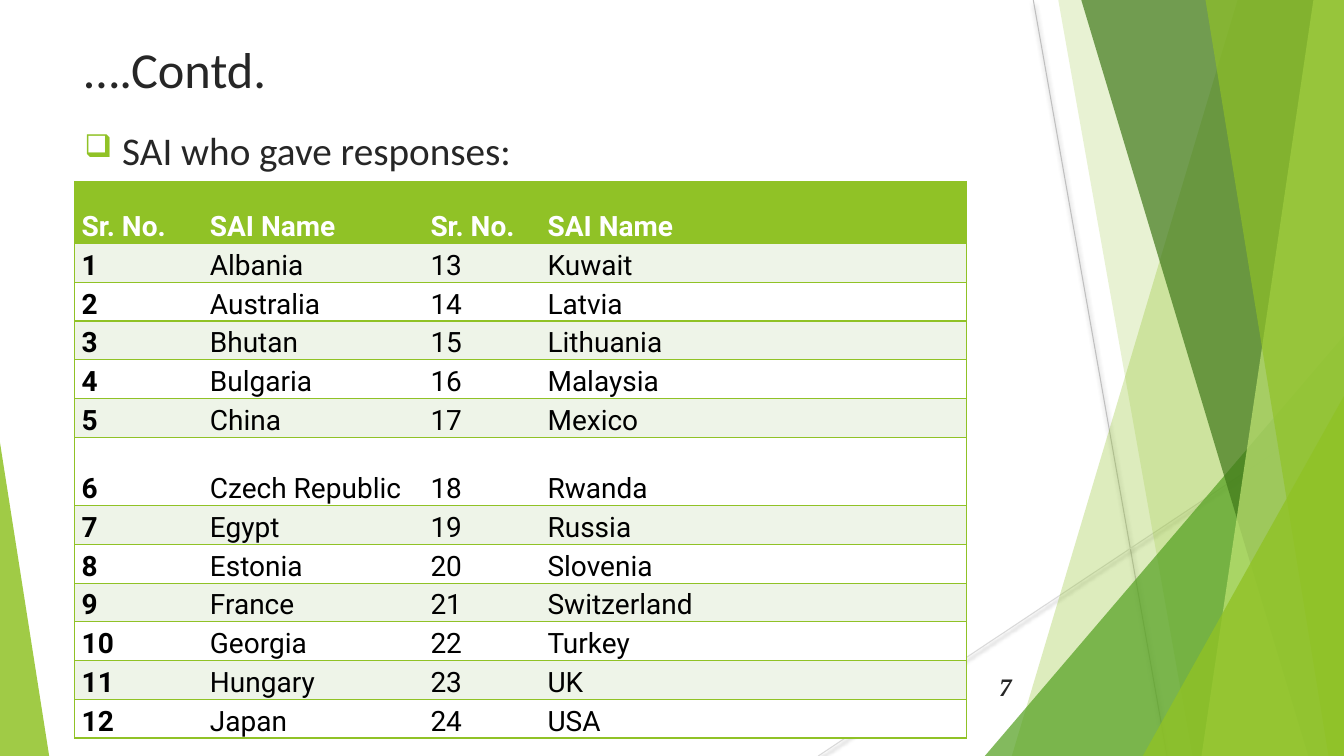
from lxml import etree
from pptx import Presentation
from pptx.dml.color import RGBColor
from pptx.enum.shapes import MSO_CONNECTOR, MSO_SHAPE
from pptx.enum.text import MSO_ANCHOR, PP_ALIGN
from pptx.oxml.ns import qn
from pptx.util import Cm, Pt

STRAIGHT = MSO_CONNECTOR.STRAIGHT
TRIANGLE = MSO_SHAPE.ISOSCELES_TRIANGLE
TOP, MIDDLE, BOTTOM = MSO_ANCHOR.TOP, MSO_ANCHOR.MIDDLE, MSO_ANCHOR.BOTTOM
LEFT, RIGHT, JUSTIFY = PP_ALIGN.LEFT, PP_ALIGN.RIGHT, PP_ALIGN.JUSTIFY

SLIDE_W, SLIDE_H = 33.87, 19.05
COLORS = {
    "lime": "90C226", "green": "54A021", "forest": "3F7819", "pale": "C0E474",
    "steep_line": "BFBFBF", "flat_line": "D9D9D9", "ink": "262626",
    "black": "000000", "white": "FFFFFF", "band": "EEF4E8",
}
COUNTRIES = [
    "Albania", "Australia", "Bhutan", "Bulgaria", "China", "Czech Republic",
    "Egypt", "Estonia", "France", "Georgia", "Hungary", "Japan",
    "Kuwait", "Latvia", "Lithuania", "Malaysia", "Mexico", "Rwanda",
    "Russia", "Slovenia", "Switzerland", "Turkey", "UK", "USA",
]
COLUMN_WIDTHS = [3.23, 5.56, 2.95, 10.74]
ROW_H, HEADER_H, TALL_ROW_H, TALL_ROW = 0.95, 1.57, 1.73, 6


def rgb(name):
    return RGBColor.from_string(COLORS[name])


def child(parent, tag, **attrs):
    return etree.SubElement(parent, qn(tag), {k: str(v) for k, v in attrs.items()})


def paint(sp, color, opacity):
    """Fill a facet with a see-through colour and no outline."""
    sp.shadow.inherit = False
    sp.fill.solid()
    sp.fill.fore_color.rgb = rgb(color)
    clr = sp.fill._xPr.find(qn("a:solidFill"))[0]
    child(clr, "a:alpha", val=opacity * 1000)
    sp.line.fill.background()


def add_soft_line(shapes, start, end, color):
    """Draw a thin line with a soft shadow beneath it."""
    line = shapes.add_connector(STRAIGHT, *(Cm(v) for v in start + end))
    line.line.color.rgb = rgb(color)
    line.line.width = Pt(0.75)
    effects = child(line._element.spPr, "a:effectLst")
    shadow = child(effects, "a:outerShdw", blurRad=Pt(3.1), dist=Pt(1.6),
                   dir=5400000, rotWithShape=0)
    child(child(shadow, "a:srgbClr", val=COLORS["black"]), "a:alpha", val=38000)


def add_triangle(shapes, x, y, w, h, apex, color, opacity):
    sp = shapes.add_shape(TRIANGLE, Cm(x), Cm(y), Cm(w), Cm(h))
    sp.adjustments[0] = apex
    paint(sp, color, opacity)


def add_band(shapes, x_top, x_bottom, x_right, y, h, color, opacity):
    """Draw a facet with a slanted left edge that reaches the right edge."""
    builder = shapes.build_freeform(Cm(x_top), Cm(y))
    builder.add_line_segments([(Cm(x_right), Cm(y)), (Cm(x_right), Cm(y + h)),
                               (Cm(x_bottom), Cm(y + h))])
    paint(builder.convert_to_shape(), color, opacity)


def add_facets(shapes, x, y, w, h):
    right, bottom = x + w, y + h

    def band(top_offset, bottom_offset, color, opacity):
        add_band(shapes, x + top_offset, x + bottom_offset, right, y, h, color, opacity)

    def corner(offset, height, color, opacity):
        add_triangle(shapes, x + offset, bottom - height, w - offset, height,
                     1, color, opacity)

    add_soft_line(shapes, (x + 5.42, y), (x + 8.79, bottom), "steep_line")
    add_soft_line(shapes, (right, y + 10.24), (x, bottom), "flat_line")
    band(10.57, 4.88, "lime", 30)
    band(6.05, 9.43, "lime", 20)
    corner(4.2, 10.59, "green", 72)
    band(6.63, 12.35, "forest", 70)
    band(12.48, 9.66, "pale", 70)
    band(9.76, 12.86, "lime", 65)
    corner(8.18, 9.07, "lime", 80)


def add_text(shapes, x, y, w, h, text, size, font="Calibri", align=LEFT,
             anchor=TOP, bullet=None):
    tf = shapes.add_textbox(Cm(x), Cm(y), Cm(w), Cm(h)).text_frame
    tf.word_wrap = True
    tf.vertical_anchor = anchor
    p = tf.paragraphs[0]
    p.text = text
    p.alignment = align
    if bullet:
        pPr = p._p.get_or_add_pPr()
        pPr.set("marL", str(Cm(0.95)))
        pPr.set("indent", str(Cm(-0.95)))
        child(child(pPr, "a:buClr"), "a:srgbClr", val=COLORS["lime"])
        child(pPr, "a:buSzPct", val=80000)
        child(pPr, "a:buChar", char=bullet)
    r = p.runs[0]
    r.font.name, r.font.size = font, Pt(size)
    r.font.color.rgb = rgb("ink")
    return r


def set_borders(cell, drawn):
    """Rule the named sides of a cell and clear the others."""
    tcPr = cell._tc.get_or_add_tcPr()
    for side in "LRTB":
        ln = child(tcPr, f"a:ln{side}", w=Pt(1))
        if side in drawn:
            child(child(ln, "a:solidFill"), "a:srgbClr", val=COLORS["lime"])
        else:
            child(ln, "a:noFill")


def format_cell(cell, text, fill, color, bold, borders):
    set_borders(cell, borders)
    cell.fill.solid()
    cell.fill.fore_color.rgb = rgb(fill)
    cell.vertical_anchor = BOTTOM
    cell.margin_left = cell.margin_right = Cm(0.18)
    cell.margin_top = cell.margin_bottom = 0
    p = cell.text_frame.paragraphs[0]
    p.text = text
    p.alignment = JUSTIFY
    p.line_spacing = 1.15
    r = p.runs[0]
    r.font.name, r.font.size, r.font.bold = "Roboto", Pt(20), bold
    r.font.color.rgb = rgb(color)


def add_country_table(shapes, x, y, w):
    half = len(COUNTRIES) // 2
    rows = [["Sr. No.", "SAI Name"] * 2]
    for i in range(half):
        rows.append([str(i + 1), COUNTRIES[i], str(i + 1 + half), COUNTRIES[i + half]])
    heights = [HEADER_H] + [ROW_H] * half
    heights[TALL_ROW] = TALL_ROW_H
    table = shapes.add_table(len(rows), len(COLUMN_WIDTHS), Cm(x), Cm(y),
                             Cm(w), Cm(sum(heights))).table
    for column, width in zip(table.columns, COLUMN_WIDTHS):
        column.width = Cm(width)
    outer = {0: "LTB", len(COLUMN_WIDTHS) - 1: "RTB"}
    for i, values in enumerate(rows):
        table.rows[i].height = Cm(heights[i])
        header = i == 0
        fill = "lime" if header else "band" if i % 2 else "white"
        for j, value in enumerate(values):
            format_cell(table.cell(i, j), value, fill, "white" if header else "black",
                        header or j == 0, outer.get(j, "TB"))


def main():
    prs = Presentation()
    prs.slide_width, prs.slide_height = Cm(SLIDE_W), Cm(SLIDE_H)
    shapes = prs.slides.add_slide(prs.slide_layouts[6]).shapes
    add_facets(shapes, 20.62, 0, SLIDE_W - 20.62, SLIDE_H)
    add_triangle(shapes, 0, SLIDE_H - 7.9, 1.24, 7.9, 0, "lime", 85)
    add_text(shapes, 1.88, 0.84, 23.88, 3.66, "….Contd.", 36)
    add_text(shapes, 1.88, 3.07, 27.2, 13.89, "SAI who gave responses:", 28, bullet="❑")
    number = add_text(shapes, 23.85, 16.79, 1.9, 1.02, "7", 18,
                      font="Times New Roman", align=RIGHT, anchor=MIDDLE)
    number.font.bold = number.font.italic = True
    add_country_table(shapes, 1.88, 4.57, sum(COLUMN_WIDTHS))
    prs.save("out.pptx")


if __name__ == "__main__":
    main()
